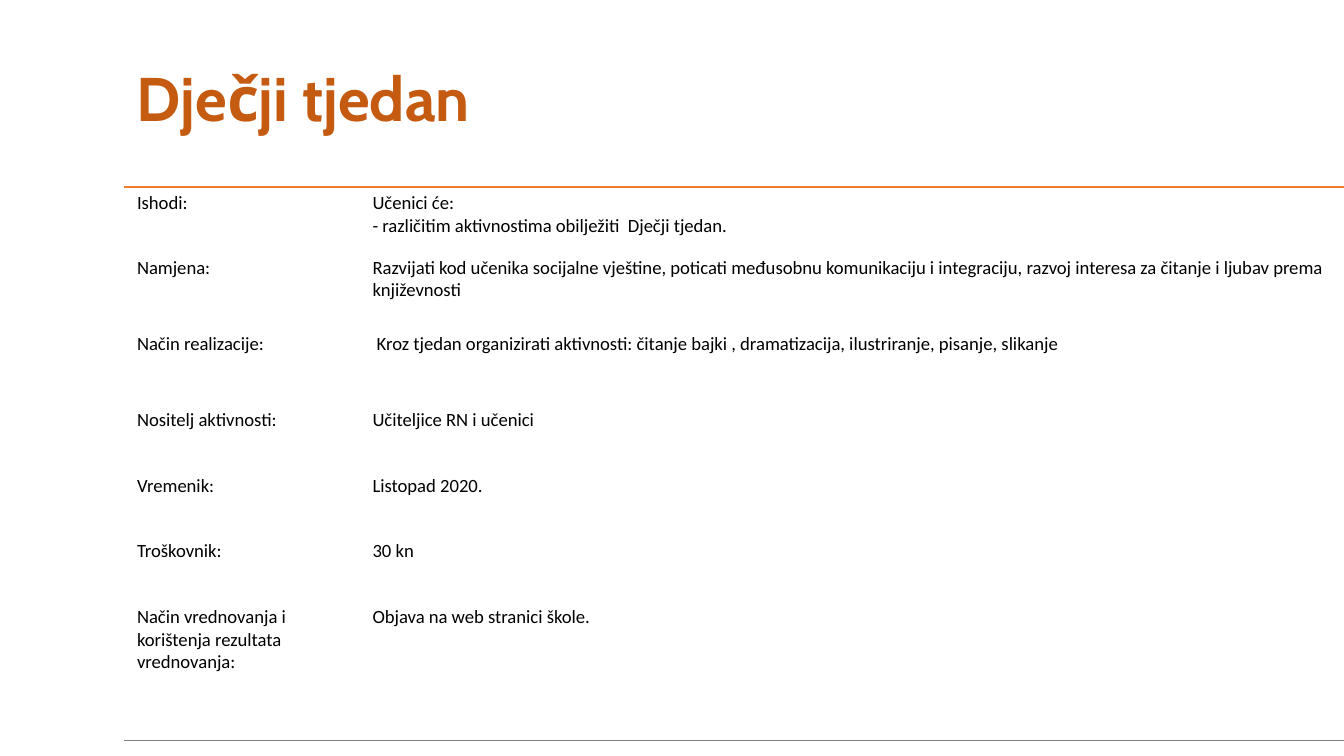
import pptx
import pptx.util
import pptx.dml.color
import pptx.enum.text
from lxml import etree

Cm = pptx.util.Cm
Pt = pptx.util.Pt
RGB = pptx.dml.color.RGBColor

BLACK = RGB(0x00, 0x00, 0x00)
RUST = RGB(0xC5, 0x5A, 0x11)
ORANGE = RGB(0xED, 0x7D, 0x31)
GREY = RGB(0x80, 0x80, 0x80)
NS = "http://schemas.openxmlformats.org/drawingml/2006/main"
PLAIN = "{2D5ABB26-0587-4C30-8999-92F81FD0307C}"

TITLE = "Dječji tjedan"
ROWS = [
    ("Ishodi:", "Učenici će:\n- različitim aktivnostima obilježiti  Dječji tjedan.", 1.22),
    ("Namjena:", "Razvijati kod učenika socijalne vještine, poticati međusobnu "
     "komunikaciju i integraciju, razvoj interesa za čitanje i ljubav prema "
     "književnosti", 1.44),
    ("Način realizacije:", " Kroz tjedan organizirati aktivnosti: čitanje bajki , "
     "dramatizacija, ilustriranje, pisanje, slikanje", 1.44),
    ("Nositelj aktivnosti:", "Učiteljice RN i učenici", 1.24),
    ("Vremenik:", "Listopad 2020.", 1.24),
    ("Troškovnik:", "30 kn", 1.24),
    ("Način vrednovanja i korištenja rezultata vrednovanja:",
     "Objava na web stranici škole.", 2.64),
]
COLS = [4.45, 19.76]
LEFT, TOP = 2.34, 3.53


def style(frame, font, size, color, bold=False):
    for para in frame.paragraphs:
        for run in para.runs:
            run.font.name = font
            run.font.size = Pt(size)
            run.font.color.rgb = color
            run.font.bold = bold


def edge(cell, side, color, width):
    props = cell._tc.get_or_add_tcPr()
    line = etree.Element(f"{{{NS}}}{side}", w=str(Pt(width)))
    fill = etree.SubElement(line, f"{{{NS}}}solidFill")
    etree.SubElement(fill, f"{{{NS}}}srgbClr", val=str(color))
    props.insert(0, line)


deck = pptx.Presentation()
deck.slide_width, deck.slide_height = Cm(25.4), Cm(14.29)
slide = deck.slides.add_slide(deck.slide_layouts[6])

frame = slide.shapes.add_table(
    len(ROWS), len(COLS), Cm(LEFT), Cm(TOP),
    Cm(sum(COLS)), Cm(sum(row[-1] for row in ROWS)))
table = frame.table
table.first_row = table.horz_banding = False
table._tbl.tblPr.find(f"{{{NS}}}tableStyleId").text = PLAIN
for col, width in zip(table.columns, COLS):
    col.width = Cm(width)

for row, (label, text, height) in zip(table.rows, ROWS):
    row.height = Cm(height)
    for cell, words in zip(row.cells, (label, text)):
        cell.text_frame.text = words
        cell.margin_left = cell.margin_right = Cm(0.25)
        cell.margin_top = cell.margin_bottom = Cm(0.1)
        cell.fill.background()
        style(cell.text_frame, "Calibri", 10, BLACK)

for col in range(len(COLS)):
    edge(table.cell(0, col), "lnT", ORANGE, 1)
    edge(table.cell(len(ROWS) - 1, col), "lnB", GREY, 0.5)

title = slide.shapes.add_textbox(Cm(LEFT), Cm(0.79), Cm(21.9), Cm(2.26)).text_frame
title.word_wrap = True
title.vertical_anchor = pptx.enum.text.MSO_ANCHOR.MIDDLE
title.text = TITLE
title.paragraphs[0].line_spacing = 0.9
style(title, "Cabin", 33, RUST, True)

deck.save("out.pptx")
